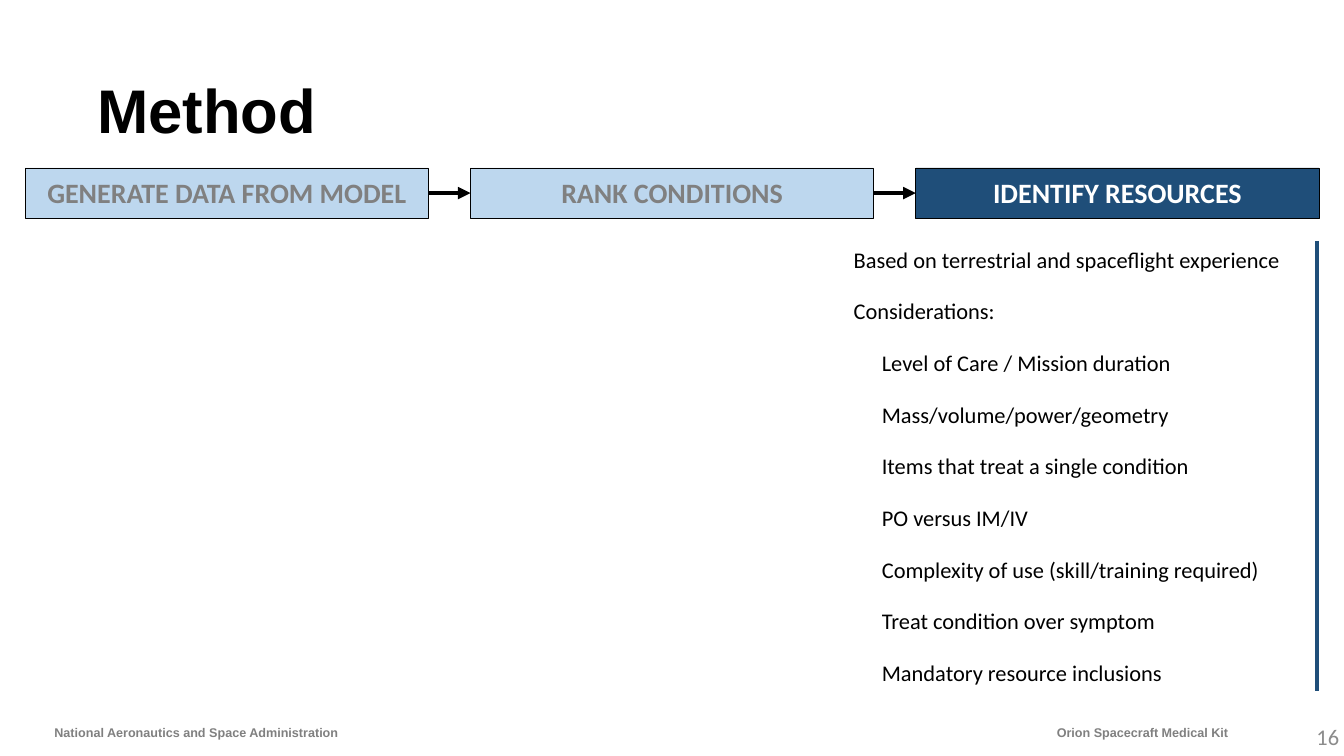
import pptx
import pptx.dml.color
import pptx.enum.shapes
import pptx.enum.text
import pptx.oxml.ns
import pptx.util
from lxml import etree

Cm, Pt = pptx.util.Cm, pptx.util.Pt
Align = pptx.enum.text.PP_ALIGN
Anchor = pptx.enum.text.MSO_ANCHOR
AutoSize = pptx.enum.text.MSO_AUTO_SIZE

# Content
TITLE = "Method"
STEPS = ["GENERATE DATA FROM MODEL", "RANK CONDITIONS", "IDENTIFY RESOURCES"]
CURRENT_STEP = 2
POINTS = [
    (1, "Based on terrestrial and spaceflight experience"),
    (1, "Considerations:"),
    (3, "Level of Care / Mission duration"),
    (3, "Mass/volume/power/geometry"),
    (3, "Items that treat a single condition"),
    (3, "PO versus IM/IV"),
    (3, "Complexity of use (skill/training required)"),
    (3, "Treat condition over symptom"),
    (3, "Mandatory resource inclusions"),
]
AGENCY = "National Aeronautics and Space Administration"
TALK = "Orion Spacecraft Medical Kit"
PAGE = "16"

THEME = {
    "heading": "Arial", "body": "Calibri",
    "black": "000000", "white": "FFFFFF", "grey": "808080", "page": "8C8C8C",
    "active": "1F4E79", "inactive": "BDD7EE",
    "title_pt": 88, "step_pt": 40, "body_pt": 32, "footer_pt": 18,
}

# Layout, in centimetres
STEP_LEFT, STEP_TOP, STEP_WIDTH, STEP_HEIGHT = 1.27, 8.46, 20.32, 2.54
STEP_PITCH = 22.44
POINT_INDENT = {1: 1.27, 3: 2.69}


def colour(name):
    return pptx.dml.color.RGBColor.from_string(THEME[name])


def style(paragraph, face, size, ink, bold=False):
    font = paragraph.font
    font.name, font.size, font.bold = THEME[face], Pt(THEME[size]), bold
    font.color.rgb = colour(ink)


def add_text_box(left, top, width, height, anchor=Anchor.TOP):
    frame = slide.shapes.add_textbox(Cm(left), Cm(top), Cm(width), Cm(height)).text_frame
    frame.word_wrap = True
    frame.vertical_anchor = anchor
    return frame


def add_line(x1, y1, x2, y2, ink, weight, arrow=False):
    line = slide.shapes.add_connector(
        pptx.enum.shapes.MSO_CONNECTOR.STRAIGHT, Cm(x1), Cm(y1), Cm(x2), Cm(y2))
    line.line.color.rgb = colour(ink)
    line.line.width = Pt(weight)
    if arrow:
        etree.SubElement(line.line._get_or_add_ln(),
                         pptx.oxml.ns.qn("a:tailEnd"), type="triangle")
    etree.SubElement(line._element.spPr, pptx.oxml.ns.qn("a:effectLst"))


deck = pptx.Presentation()
deck.slide_width, deck.slide_height = Cm(67.73), Cm(38.1)
slide = deck.slides.add_slide(deck.slide_layouts[5])

# Title
title = slide.shapes.title
title.left, title.top, title.width, title.height = Cm(4.65), Cm(2.03), Cm(58.42), Cm(7.37)
title.text_frame.text = TITLE
title.text_frame.auto_size = AutoSize.NONE
title.text_frame.vertical_anchor = Anchor.MIDDLE
heading = title.text_frame.paragraphs[0]
heading.alignment = Align.LEFT
heading.line_spacing = 0.9
style(heading, "heading", "title_pt", "black", True)

# Footer
for text, left, width, align in [(AGENCY, 2.59, 26.44, Align.LEFT),
                                 (TALK, 45.59, 16.46, Align.RIGHT)]:
    footer = add_text_box(left, 36.4, width, 1.07, Anchor.BOTTOM)
    footer.margin_left = footer.margin_right = Cm(0.15)
    footer.margin_top = footer.margin_bottom = Cm(0.15)
    footer.text = text
    footer.paragraphs[0].alignment = align
    style(footer.paragraphs[0], "heading", "footer_pt", "grey", True)

page = add_text_box(53.62, 36.45, 14.12, 1.35, Anchor.MIDDLE)
page.text = PAGE
page.paragraphs[0].alignment = Align.RIGHT
style(page.paragraphs[0], "body", "body_pt", "page")

# Process steps, joined by arrows
for index, step in enumerate(STEPS):
    left = STEP_LEFT + index * STEP_PITCH
    active = index == CURRENT_STEP
    box = slide.shapes.add_shape(pptx.enum.shapes.MSO_SHAPE.RECTANGLE,
                                 Cm(left), Cm(STEP_TOP), Cm(STEP_WIDTH), Cm(STEP_HEIGHT))
    box.shadow.inherit = False
    box.fill.solid()
    box.fill.fore_color.rgb = colour("active" if active else "inactive")
    box.line.color.rgb = colour("black")
    box.line.width = Pt(0.75)
    box.text_frame.vertical_anchor = Anchor.TOP
    box.text_frame.text = step
    label = box.text_frame.paragraphs[0]
    label.alignment = Align.CENTER
    label.line_spacing, label.space_after = 1.14, Pt(24)
    style(label, "body", "step_pt", "white" if active else "grey", True)
    if index:
        middle = STEP_TOP + STEP_HEIGHT / 2
        add_line(left - STEP_PITCH + STEP_WIDTH, middle, left, middle, "black", 6, arrow=True)

# Points for the current step, with a rule on the right
add_line(66.37, 12.14, 66.37, 34.82, "active", 4.5)
points = add_text_box(41.5, 12.07, 24.77, 22.76)
points.auto_size = AutoSize.SHAPE_TO_FIT_TEXT
for index, (level, text) in enumerate(POINTS):
    point = points.add_paragraph() if index else points.paragraphs[0]
    point.text = text
    point.level = level
    properties = point._p.get_or_add_pPr()
    properties.set("marL", str(Cm(POINT_INDENT[level])))
    properties.set("indent", "0")
    point.line_spacing, point.space_after = 1.14, Pt(6)
    if index:
        point.space_before = Pt(24)
    style(point, "body", "body_pt", "black")

deck.save("out.pptx")
